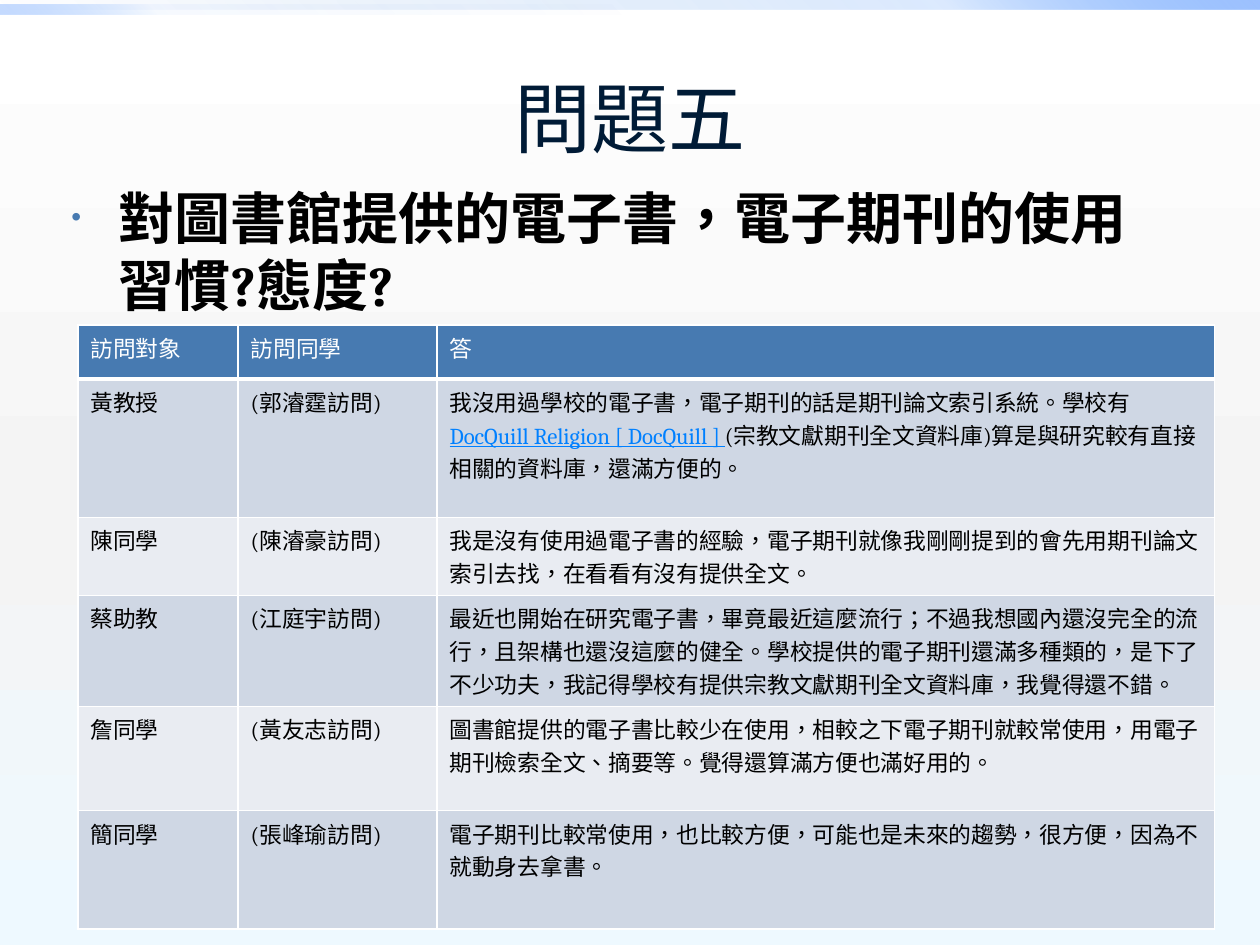
from lxml.etree import SubElement
from pptx import Presentation
from pptx.dml.color import RGBColor
from pptx.enum.lang import MSO_LANGUAGE_ID
from pptx.enum.shapes import MSO_SHAPE
from pptx.enum.text import MSO_ANCHOR, PP_ALIGN
from pptx.oxml.ns import qn
from pptx.util import Cm, Pt

BLUE, WHITE, BLACK, LINK = "477AB1", "FFFFFF", "000000", "0080FF"
BANDS = ["CFD7E4", "E9ECF2"]
COLS = [3.23, 4.01, 15.67]
HEIGHTS = [1.09, 2.79, 1.57, 2.24, 2.1, 2.39]
ROWS = [
    ["訪問對象", "訪問同學", "答"],
    ["黃教授", "(郭濬霆訪問)", [
        ("我沒用過學校的電子書，電子期刊的話是期刊論文索引系統。學校有", BLACK),
        ("DocQuill Religion [ DocQuill ] ", LINK),
        ("(宗教文獻期刊全文資料庫)算是與研究較有直接相關的資料庫，還滿方便的。", BLACK)]],
    ["陳同學", "(陳濬豪訪問)",
     "我是沒有使用過電子書的經驗，電子期刊就像我剛剛提到的會先用期刊論文索引去找，在看看有沒有提供全文。"],
    ["蔡助教", "(江庭宇訪問)",
     "最近也開始在研究電子書，畢竟最近這麼流行；不過我想國內還沒完全的流行，且架構也還沒這麼的健全。"
     "學校提供的電子期刊還滿多種類的，是下了不少功夫，我記得學校有提供宗教文獻期刊全文資料庫，我覺得還不錯。"],
    ["詹同學", "(黃友志訪問)",
     "圖書館提供的電子書比較少在使用，相較之下電子期刊就較常使用，用電子期刊檢索全文、摘要等。覺得還算滿方便也滿好用的。"],
    ["簡同學", "(張峰瑜訪問)",
     "電子期刊比較常使用，也比較方便，可能也是未來的趨勢，很方便，因為不就動身去拿書。"],
]


def rgb(code):
    return RGBColor.from_string(code)


def node(parent, tag, **attrs):
    return SubElement(parent, qn("a:" + tag), {k: str(v) for k, v in attrs.items()})


def blend(parent, stops, angle):
    """Swap the solid fill in parent for a gradient of (place, colour, alpha) stops."""
    solid = parent.find(qn("a:solidFill"))
    grad = node(parent, "gradFill", rotWithShape=1)
    parent.replace(solid, grad)
    marks = node(grad, "gsLst")
    for place, code, alpha in stops:
        color = node(node(marks, "gs", pos=place * 1000), "srgbClr", val=code)
        if alpha < 100:
            node(color, "alpha", val=alpha * 1000)
    node(grad, "lin", ang=angle * 60000, scaled=0)


class Deck:
    font = "Cambria"

    def __init__(self):
        self.file = Presentation()
        self.file.slide_width, self.file.slide_height = Cm(25.4), Cm(19.05)
        self.slide = self.file.slides.add_slide(self.file.slide_layouts[6])

    def ground(self, stops, angle):
        fill = self.slide.background.fill
        fill.solid()
        fill.fore_color.rgb = rgb(WHITE)
        blend(self.slide.element.find(".//" + qn("p:bgPr")), stops, angle)

    def bar(self, box, stops, angle):
        shape = self.slide.shapes.add_shape(MSO_SHAPE.RECTANGLE, *map(Cm, box))
        shape.shadow.inherit = False
        shape.line.fill.background()
        shape.fill.solid()
        blend(shape.element.spPr, stops, angle)

    def text(self, para, words, size, color, font=None, bold=False):
        run = para.add_run()
        run.text = words
        style = run.font
        style.size, style.name, style.bold = Pt(size), font or self.font, bold
        style.color.rgb = rgb(color)
        style.underline = color == LINK
        style.language_id = MSO_LANGUAGE_ID.TRADITIONAL_CHINESE

    def frame(self, box, anchor=MSO_ANCHOR.TOP):
        """Add a wrapping text box and return its first paragraph."""
        body = self.slide.shapes.add_textbox(*map(Cm, box)).text_frame
        body.word_wrap = True
        body.vertical_anchor = anchor
        return body.paragraphs[0]

    def title(self, words, box):
        para = self.frame(box, MSO_ANCHOR.MIDDLE)
        para.alignment = PP_ALIGN.CENTER
        self.text(para, words, 44, "001B36", font="Roboto")

    def bullet(self, words, box):
        para = self.frame(box)
        props = para._p.get_or_add_pPr()
        props.set("marL", str(Cm(0.95)))
        props.set("indent", str(-Cm(0.95)))
        node(node(props, "buClr"), "srgbClr", val=BLUE)
        node(props, "buSzPct", val=50000)
        node(props, "buFont", typeface="Arial")
        node(props, "buChar", char="•")
        self.text(para, words, 32, BLACK, bold=True)

    def border(self, cell, top, base):
        props = cell._tc.get_or_add_tcPr()
        sides = [("lnL", 1), ("lnR", 1), ("lnT", top), ("lnB", base)]
        for spot, (side, width) in enumerate(sides):
            line = node(props, side, w=Pt(width))
            node(node(line, "solidFill"), "srgbClr", val=WHITE)
            props.insert(spot, line)

    def table(self, left, top, cols, heights, rows):
        grid = self.slide.shapes.add_table(
            len(rows), len(cols), Cm(left), Cm(top), Cm(sum(cols)), Cm(sum(heights))).table
        for col, width in zip(grid.columns, cols):
            col.width = Cm(width)
        for i, (row, height, texts) in enumerate(zip(grid.rows, heights, rows)):
            row.height = Cm(height)
            for cell, entry in zip(row.cells, texts):
                cell.fill.solid()
                cell.fill.fore_color.rgb = rgb(BANDS[(i - 1) % 2] if i else BLUE)
                self.border(cell, 3 if i == 1 else 1, 1 if i else 3)
                runs = [(entry, BLACK if i else WHITE)] if isinstance(entry, str) else entry
                for words, color in runs:
                    self.text(cell.text_frame.paragraphs[0], words, 13, color)


def main():
    deck = Deck()
    deck.ground([(0, WHITE, 100), (55, "F4F4F4", 100), (100, "EEF9FF", 100)], 90)
    deck.bar((0, 0, 25.4, 0.2),
             [(0, "0058B7", 0), (75, "4F95FF", 20), (100, "9EC2FF", 100)], 315)
    deck.bar((0, 0.1, 12.7, 0.2),
             [(0, "0058B7", 0), (75, "4F95FF", 5), (100, "9EC2FF", 60)], 135)
    deck.title("問題五", (1.27, 0.76, 22.86, 3.18))
    deck.bullet("對圖書館提供的電子書，電子期刊的使用習慣?態度?", (1.19, 3.58, 22.86, 12.57))
    deck.table(1.57, 6.55, COLS, HEIGHTS, ROWS)
    deck.file.save("out.pptx")


if __name__ == "__main__":
    main()
